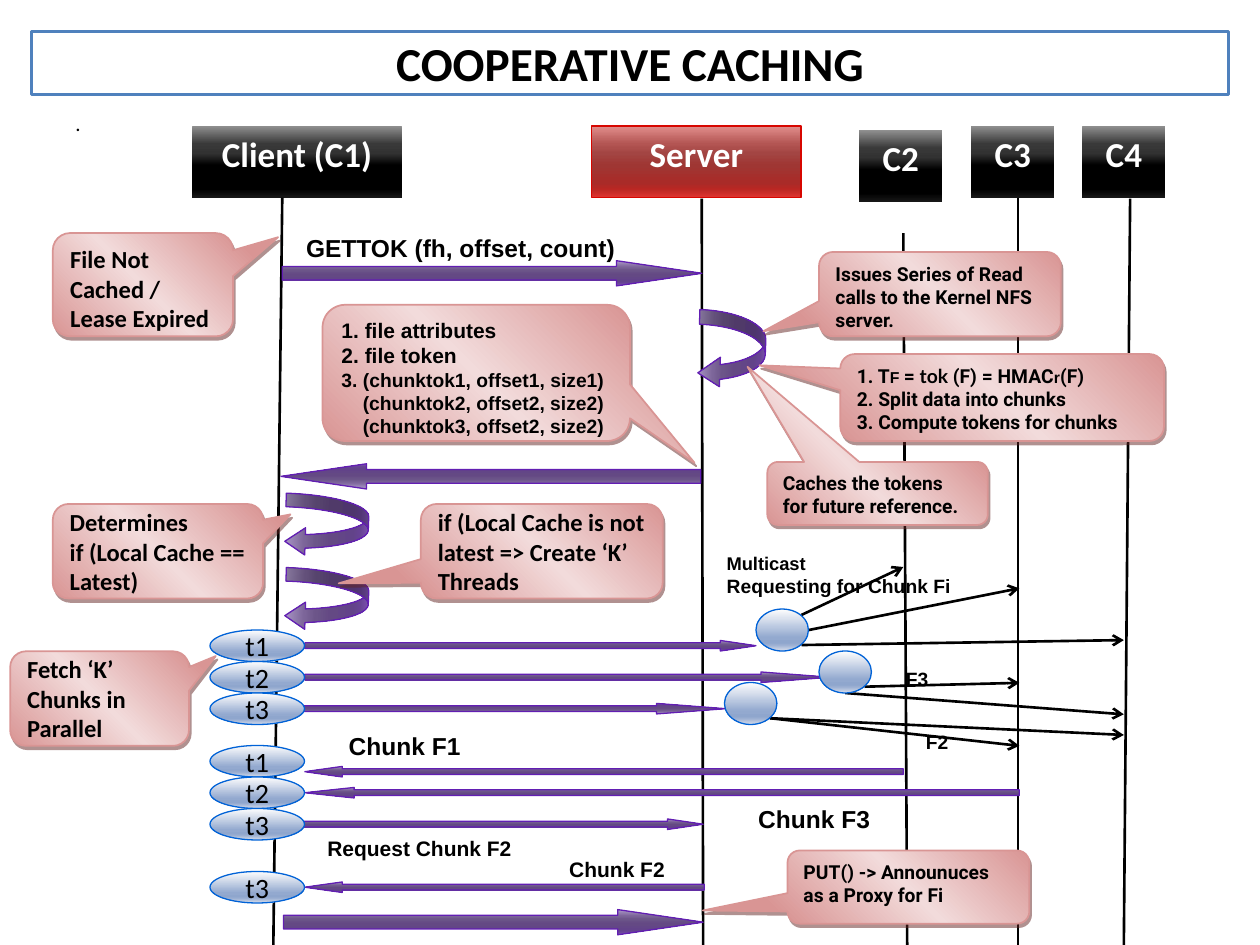
"""Build the cooperative caching sequence slide."""
from lxml.etree import SubElement
from pptx import Presentation
from pptx.dml.color import RGBColor
from pptx.enum.shapes import MSO_CONNECTOR, MSO_SHAPE
from pptx.enum.text import MSO_ANCHOR, PP_ALIGN
from pptx.oxml.ns import qn
from pptx.util import Pt

BLACK = RGBColor(0, 0, 0)
WHITE = RGBColor(255, 255, 255)
BLUE = RGBColor(0x4F, 0x81, 0xBD)
RED = RGBColor(0xD7, 0x06, 0x00)
PLUM = RGBColor(0x62, 0x1E, 0xB3)
AZURE = RGBColor(0x00, 0x62, 0xD7)
ROSE = RGBColor(0xD9, 0x95, 0x94)
WINE = RGBColor(0x62, 0x24, 0x23)

GLOSS = (0, 25, 38, 55, 80, 88, 100)
DARK = list(zip(GLOSS, "909090 393939 323232 000000 000000 000000 181818".split()))
RUBY = list(zip(GLOSS, "E28E8C B35553 A34543 9F3633 A92B28 B92723 DF3430".split()))
GRAPE = list(zip(GLOSS, "AD9BC9 7C6599 6C5589 644984 624389 674394 7F55B3".split()))
SKY = [(0, "FEFEFE"), (68, "93A9CF"), (81, "8FA6CD"), (86, "9BAFD2"), (100, "D7DDEB")]
PINK = [(0, "D99594"), (50, "F2DBDB"), (100, "D99594")]

deck = Presentation()
deck.slide_width, deck.slide_height = Pt(720), Pt(540)
slide = deck.slides.add_slide(deck.slide_layouts[6])
items = slide.shapes


def draw(kind, box, stops, edge=None, angle=270, width=0.75):
    shape = items.add_shape(kind, *map(Pt, box))
    shape.shadow.inherit = False
    if stops:
        shape.fill.gradient()
        shape.fill.gradient_angle = angle
        ramp = shape.fill._xPr.find(qn("a:gradFill")).find(qn("a:gsLst"))
        ramp.clear()
        for place, tint in stops:
            stop = SubElement(ramp, qn("a:gs"), pos=str(place * 1000))
            SubElement(stop, qn("a:srgbClr"), val=tint)
    else:
        shape.fill.solid()
        shape.fill.fore_color.rgb = WHITE
    if edge is None:
        shape.line.fill.background()
    else:
        shape.line.color.rgb = edge
        shape.line.width = Pt(width)
    return shape


def write(shape, *rows, font="Arial", size=11, bold=True, color=BLACK,
          align=PP_ALIGN.LEFT, anchor=MSO_ANCHOR.TOP, before=0):
    frame = shape.text_frame
    frame.word_wrap = True
    frame.vertical_anchor = anchor
    for i, row in enumerate(rows):
        para = frame.add_paragraph() if i else frame.paragraphs[0]
        para.alignment = align
        para.space_before = Pt(before)
        for text, face, points in [(row, font, size)] if isinstance(row, str) else row:
            run = para.add_run()
            run.text = text
            run.font.name, run.font.size = face, Pt(points)
            run.font.bold = bold
            run.font.color.rgb = color


title = draw(MSO_SHAPE.RECTANGLE, (18, 18, 684, 36), None, BLUE, width=1.5)
write(title, "COOPERATIVE CACHING", font="Calibri", size=27,
      align=PP_ALIGN.CENTER, anchor=MSO_ANCHOR.MIDDLE)

for name, left, top, wide, stops, edge in [
    ("Client (C1)", 110, 72, 119.5, DARK, None),
    ("Server", 338.2, 72, 119.5, RUBY, RED),
    ("C2", 491, 74.4, 47.5, DARK, None),
    ("C3", 555, 72, 47.5, DARK, None),
    ("C4", 618.5, 72, 47.5, DARK, None),
]:
    head = draw(MSO_SHAPE.RECTANGLE, (left, top, wide, 41), stops, edge)
    write(head, name, font="Calibri", size=20, color=WHITE, align=PP_ALIGN.CENTER)

LIVES = [
    (161.3, 113, 156.2, 540), (581.8, 113, 581.8, 540), (516.2, 133.2, 518.4, 540),
    (401, 113.5, 401.8, 540), (645.8, 113.5, 642.2, 540),
]
CASTS = [
    (458, 351.4, 516.2, 324), (462.2, 360, 582.5, 336.2), (458, 368.6, 642.2, 365.8),
    (494, 392.4, 582.5, 390.2), (483, 396, 642.2, 408.2),
    (440, 410.4, 582.5, 426.2), (440, 410.4, 642.2, 420),
]
for ends in LIVES + CASTS:
    link = items.add_connector(MSO_CONNECTOR.STRAIGHT, *map(Pt, ends))
    link.line.color.rgb = BLACK
    link.line.width = Pt(1.5)
    if ends in CASTS:
        SubElement(link.line._get_or_add_ln(), qn("a:tailEnd"), type="arrow")
    SubElement(link._element.spPr, qn("a:effectLst"))

for left, top, wide, high, point, turn, flip in [
    (161.3, 149, 239.8, 14.4, 3.39, 0, 0),
    (160.6, 265, 239.8, 14.4, 3.39, 180, 0),
    (174.2, 366, 257.8, 6, 3.39, 0, 0),
    (174.2, 384, 300.2, 6, 6.57, 0, 0),
    (168.5, 402, 246.2, 6, 6.57, 0, 1),
    (174.2, 438, 342, 6, 3.55, 180, 1),
    (174.2, 450, 408.2, 6, 4.68, 180, 1),
    (162, 468, 239.8, 6, 3.39, 0, 0),
    (174.2, 504, 228.2, 6, 3.55, 180, 1),
    (162, 519.8, 239.8, 14.4, 3.39, 0, 0),
]:
    arrow = draw(MSO_SHAPE.RIGHT_ARROW, (left, top, wide, high), GRAPE, PLUM)
    arrow.adjustments[0], arrow.adjustments[1] = 0.54, point
    arrow.rotation = turn
    if flip:
        arrow._element.spPr.xfrm.set("flipV", "1")

for box in [(396, 180.7, 44.6, 38.2), (169.2, 276.5, 35.3, 47.5), (169.2, 319, 35.3, 47.5)]:
    loop = draw(MSO_SHAPE.CURVED_UP_ARROW, box, GRAPE, PLUM)
    for i, value in enumerate((0.22, 0.44, 0.33)):
        loop.adjustments[i] = value
    loop.rotation = 271.9
    loop._element.spPr.xfrm.set("flipH", "1")

for name, top in [("t1", 360), ("t2", 378), ("t3", 396),
                  ("t1", 426), ("t2", 444), ("t3", 462), ("t3", 498)]:
    oval = draw(MSO_SHAPE.OVAL, (120, top, 54, 18), SKY, AZURE)
    write(oval, name, font="Calibri", size=16, bold=False,
          align=PP_ALIGN.CENTER, anchor=MSO_ANCHOR.MIDDLE)

for left, top in [(432, 348), (468, 372), (414, 390)]:
    draw(MSO_SHAPE.OVAL, (left, top, 30, 24), SKY, AZURE)

BIG = dict(font="Calibri", size=14)
MID = dict(BIG, anchor=MSO_ANCHOR.MIDDLE)
SMALL = dict(font="Roboto")
TOKEN = [
    ("1. T", "Roboto", 11), ("F ", "Arial", 9), ("= ", "Roboto", 11), ("tok ", "Lato", 11),
    ("(F) = HMAC", "Roboto", 11), ("r", "Arial", 9), ("(F)", "Roboto", 11),
]
for box, tip, rows, style in [
    ((30.2, 133.2, 103, 59), (0.75, -0.46), ["File Not Cached / Lease Expired"], BIG),
    ((480.2, 202.3, 185, 49.7), (-0.75, -0.37),
     [TOKEN, "2. Split data into chunks", "3. Compute tokens for chunks"], SMALL),
    ((184.3, 174.2, 175.7, 77.8), (0.71, 0.66),
     [[("1. file attributes", "Arial", 12)], [("2. file token", "Arial", 12)],
      "3. (chunktok1, offset1, size1)", "(chunktok2, offset2, size2)",
      "(chunktok3, offset2, size2)"], {}),
    ((30.2, 288, 120.2, 54), (0.63, -0.39),
     ["Determines", "if (Local Cache == Latest)"], MID),
    ((240.5, 288, 138.2, 54), (-0.84, 0.34),
     ["if (Local Cache is not latest => Create ‘K’ Threads"], MID),
    ((468, 144, 138.2, 48.2), (-0.73, 0.44),
     ["Issues Series of Read calls to the Kernel NFS server."], SMALL),
    ((438.5, 264, 126, 36), (-0.59, -2.01),
     ["Caches the tokens for future reference."], SMALL),
    ((5.8, 372.2, 102.2, 54), (0.65, -0.45), ["Fetch ‘K’ Chunks in Parallel"], MID),
    ((450, 486, 138.2, 41.8), (-0.85, 0.32),
     ["PUT() -> Announuces as a Proxy for Fi"], SMALL),
]:
    note = draw(MSO_SHAPE.ROUNDED_RECTANGULAR_CALLOUT, box, PINK, ROSE, 45, 1)
    note.adjustments[0], note.adjustments[1] = tip
    glow = SubElement(note._element.spPr.find(qn("a:effectLst")), qn("a:outerShdw"),
                      dist=str(Pt(2.2)), dir="3780000", algn="ctr", rotWithShape="0")
    tint = SubElement(glow, qn("a:srgbClr"), val=str(WINE))
    SubElement(tint, qn("a:alpha"), val="50000")
    write(note, *rows, **style)
    for para in note.text_frame.paragraphs:
        if para.text.startswith("(chunktok"):
            para._p.get_or_add_pPr().set("marL", str(Pt(12.2)))

for box, rows, style in [
    ((167.8, 129.6, 211.7, 26), ["GETTOK (fh, offset, count)"], dict(size=14)),
    ((408.2, 311.8, 156.2, 30.2),
     [[("Multicast", "Arial", 10.5)], "Requesting for Chunk Fi"], {}),
    ((192.2, 414, 90, 26), ["Chunk F1"], dict(size=14)),
    ((426.2, 455.8, 90, 26), ["Chunk F3"], dict(size=14)),
    ((180, 473.8, 144, 18), ["Request Chunk F2"], dict(size=12)),
    ((522, 414, 41.8, 23.8), ["F2"], {}),
    ((510.5, 378, 41.8, 23.8), ["F3"], {}),
    ((318.2, 486, 90, 18), ["Chunk F2"], dict(size=12)),
    ((36, 59.8, 648, 468), ["."], dict(font="Calibri", size=12, bold=False, before=2.4)),
]:
    write(items.add_textbox(*map(Pt, box)), *rows, **style)

deck.save("out.pptx")
